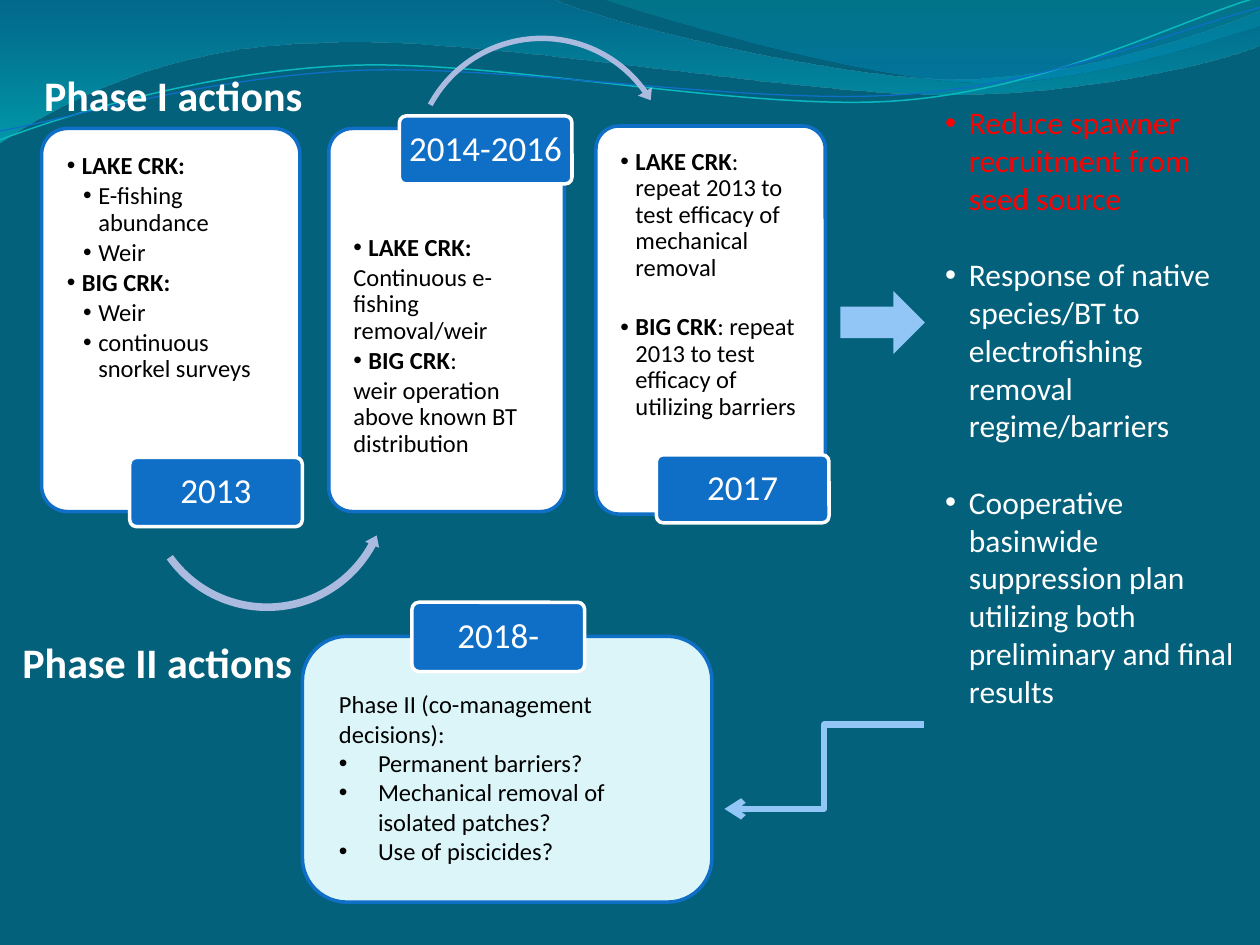
"""Build the slide of phased actions, with three dated panels and the follow-up plan."""
from dataclasses import dataclass
from typing import NamedTuple

from lxml.etree import SubElement as Sub
from pptx import Presentation
from pptx.dml.color import RGBColor as Rgb
from pptx.enum.shapes import MSO_CONNECTOR as Link, MSO_SHAPE as Kind
from pptx.enum.text import MSO_ANCHOR as Anchor, MSO_AUTO_SIZE as Fit, PP_ALIGN as Align
from pptx.oxml.ns import qn
from pptx.util import Inches, Pt

HUE = {"back": "04617B", "blue": "0F6FC6", "white": "FFFFFF", "black": "000000",
       "red": "FF0000", "pale": "DBF5F9", "sky": "91C6F7", "lilac": "ABBBDF",
       "teal": "0AB8BF", "deep": "0074A1", "aqua": "00C6CF", "sea": "00A1A9",
       "lake": "008BBF"}
FONT = "Calibri"
COLS, ROWS = 100, 75

deck = Presentation()
deck.slide_width, deck.slide_height = Inches(10), Inches(7.5)
UNIT_X, UNIT_Y = deck.slide_width / COLS, deck.slide_height / ROWS
slide = deck.slides.add_slide(deck.slide_layouts[3])
shapes = slide.shapes


class Box(NamedTuple):
    col: float
    row: float
    wide: float
    high: float

    def span(self) -> tuple:
        return (round(self.col * UNIT_X), round(self.row * UNIT_Y),
                round(self.wide * UNIT_X), round(self.high * UNIT_Y))


@dataclass
class Item:
    text: str
    lead: str = ""
    left: float = 0.12
    hang: float = 0.12
    gap: float = 0
    tone: str = "black"


@dataclass
class Panel:
    box: Box
    tag: Box
    year: str
    top: float
    items: list


@dataclass
class Wave:
    start: tuple
    steps: list
    stops: tuple = ()
    line: str = ""
    width: float = 0


def rgb(name: str) -> Rgb:
    return Rgb.from_string(HUE[name])


def style(run, size: float, tone: str, bold: bool = False) -> None:
    font = run.font
    font.name, font.size, font.bold, font.color.rgb = FONT, Pt(size), bold, rgb(tone)


def inset(frame, left: float, top: float, right: float, base: float) -> None:
    frame.margin_left, frame.margin_top = Inches(left), Inches(top)
    frame.margin_right, frame.margin_bottom = Inches(right), Inches(base)


def write(frame, items: list, size: float, pitch: float = 1, after: float = 0) -> None:
    frame.word_wrap, frame.auto_size, frame.vertical_anchor = True, Fit.NONE, Anchor.TOP
    for spot, item in enumerate(items):
        para = frame.add_paragraph() if spot else frame.paragraphs[0]
        para.text = item.lead or item.text
        if item.lead and item.text:
            para.add_run().text = item.text
        for run in para.runs:
            style(run, size, item.tone, run.text == item.lead)
        para.alignment, para.line_spacing = Align.LEFT, pitch
        para.space_before, para.space_after = Pt(item.gap), Pt(after)
        props = para._p.get_or_add_pPr()
        props.set("marL", str(Inches(item.left)))
        props.set("indent", str(-Inches(item.hang)))
        if item.hang:
            Sub(props, qn("a:buFont")).set("typeface", "Arial")
            Sub(props, qn("a:buChar")).set("char", "•")
        else:
            Sub(props, qn("a:buNone"))


def draw(kind, box: Box, fill: str, line: str = "", turn: float = 0, bends: tuple = ()):
    shape = shapes.add_shape(kind, *box.span())
    shape.shadow.inherit = False
    shape.fill.solid()
    shape.fill.fore_color.rgb = rgb(fill)
    if line:
        shape.line.color.rgb, shape.line.width = rgb(line), Pt(2)
    else:
        shape.line.fill.background()
    shape.rotation = turn
    for spot, bend in enumerate(bends):
        shape.adjustments[spot] = bend
    return shape


def draw_tag(box: Box, year: str) -> None:
    frame = draw(Kind.ROUNDED_RECTANGLE, box, "blue", "white", 0, (0.1,)).text_frame
    inset(frame, 0.04, 0.02, 0.04, 0.02)
    frame.text, frame.vertical_anchor = year, Anchor.MIDDLE
    para = frame.paragraphs[0]
    para.alignment, para.line_spacing = Align.CENTER, 0.9
    style(para.runs[0], 20, "white")


def draw_panel(panel: Panel) -> None:
    card = draw(Kind.ROUNDED_RECTANGLE, panel.box, "white", "blue", 0, (0.1,))
    inset(card.text_frame, 0.14, panel.top, 0.14, 0.14)
    write(card.text_frame, panel.items, 14, 0.9, 2)


def bend_lines(shape, steps: list) -> None:
    nodes = iter(list(shape._element.iter(qn("a:lnTo"))))
    for step in steps:
        group = [next(nodes) for _ in range(len(step) // 2)]
        if len(group) == 3:
            group[0].tag = qn("a:cubicBezTo")
            for node in group[1:]:
                group[0].append(node[0])
                node.getparent().remove(node)


def draw_wave(wave: Wave) -> None:
    spots = [(Inches(x), Inches(y)) for step in wave.steps
             for x, y in zip(step[::2], step[1::2])]
    pen = shapes.build_freeform(*(Inches(n) for n in wave.start))
    pen.add_line_segments(spots, close=bool(wave.stops))
    shape = pen.convert_to_shape()
    bend_lines(shape, wave.steps)
    shape.shadow.inherit = False
    if wave.line:
        shape.fill.background()
        shape.line.color.rgb, shape.line.width = rgb(wave.line), Pt(wave.width)
        return
    shape.line.fill.background()
    shape.fill.gradient()
    shape.fill.gradient_angle = 270
    for stop, (spot, tone, _) in zip(shape.fill.gradient_stops, wave.stops):
        stop.position, stop.color.rgb = spot, rgb(tone)
    for node, (_, _, alpha) in zip(shape._element.iter(qn("a:gs")), wave.stops):
        Sub(node[0], qn("a:alpha")).set("val", str(alpha * 1000))


def place(holder, box: Box):
    holder.left, holder.top, holder.width, holder.height = box.span()
    shapes._spTree.append(holder._element)
    inset(holder.text_frame, 0.1, 0.05, 0.1, 0.05)
    return holder.text_frame


WAVES = [
    Wave((0, 0), [(4.4, 0), (4.76, .17, 6.64, .63, 7.58, .63), (8.53, .63, 9.58, .26, 10, .09),
                  (10, .36), (9.83, .44, 8.7, .76, 7.46, .75), (6.22, .75, 3.82, .28, 2.57, .34),
                  (1.29, .36, .46, .83, 0, 1.13)], ((0, "deep", 45), (1, "aqua", 55))),
    Wave((4.79, 0), [(5.09, .11, 6.82, .62, 7.69, .65), (8.56, .69, 9.61, .32, 10, .21),
                     (10, 0)], ((0, "sea", 30), (.8, "lake", 45))),
    Wave((0, 1.11), [(.48, .93, 1.58, .57, 2.77, .52), (3.95, .47, 5.93, .89, 7.13, .8),
                     (8.33, .71, 9.38, .15, 9.98, -.02)], (), "teal", .85),
    Wave((0, 1.04), [(.47, .96, 1.64, .61, 2.83, .56), (4.03, .51, 5.97, .84, 7.17, .75),
                     (8.36, .67, 9.41, .21, 10, .06)], (), "blue", .75)]
LAKE, BIG = "LAKE CRK", "BIG CRK"
PANELS = [
    Panel(Box(3.3, 10.2, 20.5, 30.4), Box(10.3, 36.3, 13.7, 5.5), "2013", 0.14,
          [Item("", LAKE + ":"), Item("E-fishing abundance", left=.25), Item("Weir", left=.25),
           Item("", BIG + ":"), Item("Weir", left=.25),
           Item("continuous snorkel surveys", left=.25)]),
    Panel(Box(26.1, 10.2, 18.7, 30.4), Box(31.7, 9.2, 13.7, 5.4), "2014-2016", 0.79,
          [Item("", LAKE + ":"), Item("Continuous e-fishing removal/weir", left=0, hang=0),
           Item(":", BIG),
           Item("weir operation above known BT distribution", left=0, hang=0)]),
    Panel(Box(47.3, 10, 18.2, 30.8), Box(52.1, 36.1, 13.7, 5.4), "2017", 0.13,
          [Item(": repeat 2013 to test efficacy of mechanical removal", LAKE),
           Item(": repeat 2013 to test efficacy of utilizing barriers", BIG, gap=17)])]
ARCS = [(Kind.LEFT_CIRCULAR_ARROW, Box(11.1, 28.6, 20.2, 20.2), "lilac", "", 19.4,
         (.03, 2.99, 5.49, 74.99, .03)),
        (Kind.CIRCULAR_ARROW, Box(32.3, 2.4, 21.4, 21.4), "lilac", "", 335.4,
         (.02, 2.81, 209.48, 139.8, .03))]
GOALS = [("Reduce spawner recruitment from seed source", 0, "red"),
         ("Response of native species/BT to electrofishing removal regime/barriers", 22, "white"),
         ("Cooperative basinwide suppression plan utilizing both preliminary and final results",
          22, "white")]
PLANS = ["Permanent barriers?", "Mechanical removal of isolated patches?", "Use of piscicides?"]


def main() -> None:
    ground = slide.background.fill
    ground.solid()
    ground.fore_color.rgb = rgb("back")
    title, goals, plans = slide.placeholders
    for wave in WAVES:
        draw_wave(wave)
    for spot, panel in enumerate(PANELS):
        draw_panel(panel)
        for arc in ARCS[spot:spot + 1]:
            draw(*arc)
        draw_tag(panel.tag, panel.year)
    draw(Kind.RIGHT_ARROW, Box(66.7, 23.1, 6.7, 5), "sky")
    write(place(goals, Box(74, 7.7, 25.2, 51.5)),
          [Item(text, "", .19, .19, gap, tone) for text, gap, tone in GOALS], 18)
    draw(Kind.ROUNDED_RECTANGLE, Box(24, 50.5, 32.5, 21.1), "pale", "blue")
    write(place(plans, Box(25.9, 54.2, 29.2, 17.2)),
          [Item("Phase II (co-management decisions):", left=0, hang=0),
           *(Item(text, left=.31, hang=.31) for text in PLANS)], 14)
    bend = shapes.add_connector(Link.ELBOW, *(round(n * u) for n, u in zip(
        (73.3, 57.5, 57.5, 64.2), (UNIT_X, UNIT_Y) * 2)))
    bend.line.color.rgb, bend.line.width = rgb("sky"), Pt(3.5)
    Sub(bend.line._get_or_add_ln(), qn("a:tailEnd")).set("type", "arrow")
    Sub(bend._element.spPr, qn("a:effectLst"))
    label = shapes.add_textbox(*Box(0.8, 50, 25, 5).span()).text_frame
    for frame, text in ((place(title, Box(2.5, 5, 23.3, 5)), "Phase I actions"),
                        (label, "Phase II actions")):
        write(frame, [Item("", text, 0, 0, 0, "white")], 24)
    draw_tag(Box(32.7, 47.8, 13.7, 5.5), "2018-")
    deck.save("out.pptx")


if __name__ == "__main__":
    main()
